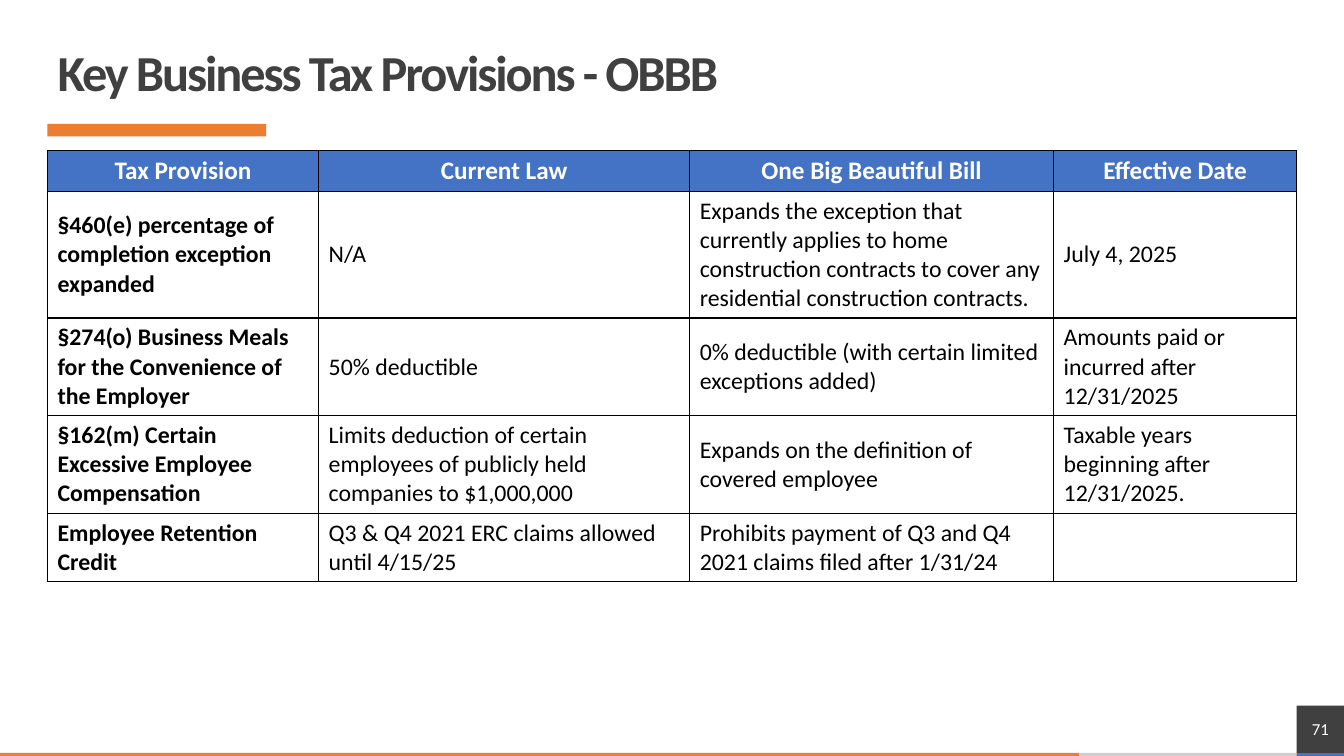
"""Builds the slide on key business tax provisions."""
from dataclasses import dataclass
from typing import Optional

from lxml.etree import SubElement
from pptx import Presentation
from pptx.dml.color import RGBColor
from pptx.enum.shapes import MSO_SHAPE
from pptx.enum.text import MSO_ANCHOR, MSO_AUTO_SIZE, PP_ALIGN
from pptx.oxml.ns import qn
from pptx.util import Emu, Inches, Pt

WIDTH, HEIGHT = Inches(13.33), Inches(7.5)
FONT = "Calibri"
COLORS = {
    "orange": "ED7D31",
    "blue": "4472C4",
    "gray": "D0CECE",
    "dark": "404040",
    "white": "FFFFFF",
    "black": "000000",
}
MARGIN, CORNER, FOOT = 3.53, 96.47, 99.6
COLUMN_SHARES = (20.18, 27.61, 27.08, 18.08)
ROW_SHARES = (5.47, 16.67, 12.93, 12.93, 8.93)
PROVISIONS = (
    ("Tax Provision", "Current Law", "One Big Beautiful Bill", "Effective Date"),
    (
        "§460(e) percentage of completion exception expanded",
        "N/A",
        "Expands the exception that currently applies to home construction "
        "contracts to cover any residential construction contracts.",
        "July 4, 2025",
    ),
    (
        "§274(o) Business Meals for the Convenience of the Employer",
        "50% deductible",
        "0% deductible (with certain limited exceptions added)",
        "Amounts paid or incurred after 12/31/2025",
    ),
    (
        "§162(m) Certain Excessive Employee Compensation",
        "Limits deduction of certain employees of publicly held companies to $1,000,000",
        "Expands on the definition of covered employee",
        "Taxable years beginning after 12/31/2025.",
    ),
    (
        "Employee Retention Credit",
        "Q3 & Q4 2021 ERC claims allowed until 4/15/25",
        "Prohibits payment of Q3 and Q4 2021 claims filed after 1/31/24",
        "",
    ),
)


@dataclass(frozen=True)
class Block:
    """A filled rectangle placed in percent of the slide's size."""

    left: float
    top: float
    width: float
    height: float
    color: str
    label: str = ""


BLOCKS = (
    Block(80.27, FOOT, 16.2, 0.4, "gray"),
    Block(0, FOOT, 80.27, 0.4, "orange"),
    Block(CORNER, FOOT, MARGIN, 0.4, "blue"),
    Block(CORNER, 93.33, MARGIN, 6.27, "dark", "71"),
    Block(MARGIN, 16.4, 16.28, 1.65, "orange"),
)


def across(percent: float) -> Emu:
    """Return a share of the slide's width."""
    return Emu(round(WIDTH * percent / 100))


def down(percent: float) -> Emu:
    """Return a share of the slide's height."""
    return Emu(round(HEIGHT * percent / 100))


def format_text(frame, size: float, color: str, bold: bool, align: Optional[PP_ALIGN]) -> None:
    """Format every run of a text frame."""
    for para in frame.paragraphs:
        para.alignment = align
        for span in para.runs:
            span.font.name = FONT
            span.font.size = Pt(size)
            span.font.bold = bold
            span.font.color.rgb = RGBColor.from_string(COLORS[color])


def draw_block(page, block: Block) -> None:
    """Draw one rectangle with its optional label."""
    box = page.shapes.add_shape(
        MSO_SHAPE.RECTANGLE, across(block.left), down(block.top),
        across(block.width), down(block.height),
    )
    box.shadow.inherit = False
    box.fill.solid()
    box.fill.fore_color.rgb = RGBColor.from_string(COLORS[block.color])
    box.line.fill.background()
    if block.label:
        frame = box.text_frame
        frame.margin_left = frame.margin_right = frame.margin_top = frame.margin_bottom = 0
        frame.vertical_anchor = MSO_ANCHOR.MIDDLE
        frame.text = block.label
        format_text(frame, 12, "white", False, PP_ALIGN.CENTER)


def write_title(page, text: str) -> None:
    """Place and format the slide title."""
    title = page.shapes.title
    title.left, title.top = across(MARGIN), down(5.33)
    title.width, title.height = across(89.57), down(9.33)
    frame = title.text_frame
    frame.text = text
    frame.word_wrap = True
    frame.auto_size = MSO_AUTO_SIZE.NONE
    frame.vertical_anchor = MSO_ANCHOR.MIDDLE
    para = frame.paragraphs[0]
    para.line_spacing = 0.9
    format_text(frame, 36, "dark", True, PP_ALIGN.LEFT)
    para.runs[0].font._element.set("spc", "-150")


def outline_cell(cell) -> None:
    """Give a cell a thin black border on all sides."""
    properties = cell._tc.get_or_add_tcPr()
    for side in ("a:lnL", "a:lnR", "a:lnT", "a:lnB"):
        line = SubElement(properties, qn(side), w=str(Pt(1)))
        fill = SubElement(line, qn("a:solidFill"))
        SubElement(fill, qn("a:srgbClr"), val=COLORS["black"])


def draw_table(page) -> None:
    """Draw the table of provisions."""
    table = page.shapes.add_table(
        len(ROW_SHARES), len(COLUMN_SHARES), across(MARGIN), down(19.87),
        across(sum(COLUMN_SHARES)), down(sum(ROW_SHARES)),
    ).table
    for column, share in zip(table.columns, COLUMN_SHARES):
        column.width = across(share)
    for row, share in zip(table.rows, ROW_SHARES):
        row.height = down(share)
    for row_index, texts in enumerate(PROVISIONS):
        for column_index, text in enumerate(texts):
            cell = table.cell(row_index, column_index)
            cell.text_frame.text = text
            outline_cell(cell)
            if row_index == 0:
                cell.fill.solid()
                cell.fill.fore_color.rgb = RGBColor.from_string(COLORS["blue"])
                format_text(cell.text_frame, 18, "white", True, PP_ALIGN.CENTER)
            else:
                cell.fill.background()
                cell.vertical_anchor = MSO_ANCHOR.MIDDLE
                format_text(cell.text_frame, 17, "black", column_index == 0, PP_ALIGN.LEFT)


def main() -> None:
    """Build and save the deck."""
    deck = Presentation()
    deck.slide_width, deck.slide_height = WIDTH, HEIGHT
    page = deck.slides.add_slide(deck.slide_layouts[5])
    for block in BLOCKS:
        draw_block(page, block)
    write_title(page, "Key Business Tax Provisions - OBBB")
    draw_table(page)
    deck.save("out.pptx")


if __name__ == "__main__":
    main()
